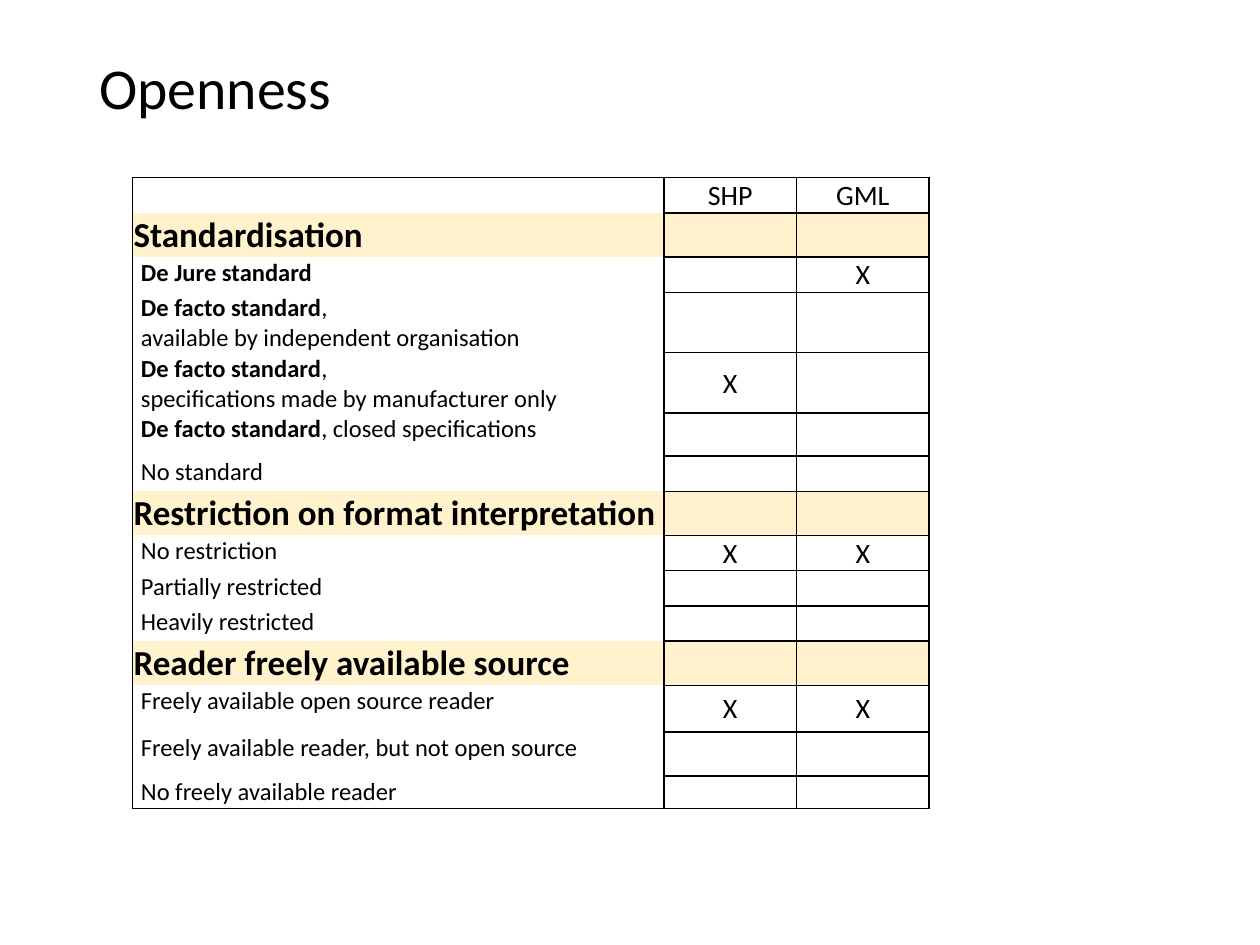
from copy import deepcopy
from lxml.etree import SubElement
from pptx import Presentation
from pptx.dml.color import RGBColor
from pptx.enum.text import MSO_ANCHOR, PP_ALIGN
from pptx.oxml.ns import qn
from pptx.util import Inches, Pt

INK, BAND = "000000", "FFF2CC"
NO_STYLE = "{2D5ABB26-0587-4C30-8999-92F81FD0307C}"


def write(frame, text, lead="", size=14, bold=False, align=PP_ALIGN.LEFT, spacing=1.0):
    paragraph = frame.paragraphs[0]
    paragraph.alignment = align
    paragraph.line_spacing = spacing
    lines = text.split("\n")
    pieces = [(lead, True, False)] if lead else []
    pieces += [(line, bold, i > 0) for i, line in enumerate(lines) if line]
    for words, heavy, starts_line in pieces:
        if starts_line:
            line_break = paragraph._p.add_br()
            line_break.append(deepcopy(run._r.rPr))
        run = paragraph.add_run()
        run.text = words
        run.font.name = "Calibri"
        run.font.size = Pt(size)
        run.font.bold = heavy
        run.font.color.rgb = RGBColor.from_string(INK)
    SubElement(paragraph._p, qn("a:endParaRPr"), sz=str(size * 100))


def outline(cell, sides):
    properties = cell._tc.get_or_add_tcPr()
    for side in "LRTB":
        line = SubElement(properties, qn(f"a:ln{side}"), w=str(Pt(1)))
        if side in sides:
            solid = SubElement(line, qn("a:solidFill"))
            SubElement(solid, qn("a:srgbClr"), val=INK)
        else:
            SubElement(line, qn("a:noFill"))


presentation = Presentation()
presentation.slide_width, presentation.slide_height = Inches(10), Inches(7.5)
slide = presentation.slides.add_slide(presentation.slide_layouts[6])

heading = slide.shapes.add_textbox(Inches(0.69), Inches(0.4), Inches(8.62), Inches(1.14)).text_frame
heading.word_wrap = True
heading.vertical_anchor = MSO_ANCHOR.TOP
heading.margin_top = Inches(0.07)
write(heading, "Openness", size=33, spacing=0.9)

DE_FACTO = "De facto standard"
criteria = [
    ("head", "", "", ("SHP", "GML"), 0.28),
    ("section", "", "Standardisation", ("", ""), 0.35),
    ("item", "De Jure standard", "", ("", "X"), 0.28),
    ("item", DE_FACTO, ", \navailable by independent organisation", ("", ""), 0.48),
    ("item", DE_FACTO, ", \nspecifications made by manufacturer only", ("X", ""), 0.48),
    ("item", DE_FACTO, ", closed specifications", ("", ""), 0.34),
    ("item", "", "No standard", ("", ""), 0.28),
    ("section", "", "Restriction on format interpretation", ("", ""), 0.35),
    ("item", "", "No restriction", ("X", "X"), 0.28),
    ("item", "", "Partially restricted", ("", ""), 0.28),
    ("item", "", "Heavily restricted", ("", ""), 0.28),
    ("section", "", "Reader freely available source", ("", ""), 0.35),
    ("item", "", "Freely available open source reader", ("X", "X"), 0.37),
    ("item", "", "Freely available reader, but not open source", ("", ""), 0.35),
    ("item", "", "No freely available reader", ("", ""), 0.26),
]

table_width = 8.42
mark_width = table_width / 8
indent_width = 0.05
widths = [indent_width, 4 * mark_width - indent_width] + [mark_width] * 4
table_height = sum(row[-1] for row in criteria)
matrix = slide.shapes.add_table(
    len(criteria), len(widths), Inches(1.05), Inches(1.41), Inches(table_width), Inches(table_height)
).table
matrix.first_row = matrix.horz_banding = False
matrix._tbl.tblPr.find(qn("a:tableStyleId")).text = NO_STYLE
for column, width in zip(matrix.columns, widths):
    column.width = Inches(width)

last = len(criteria) - 1
for r, (kind, lead, label, marks, height) in enumerate(criteria):
    matrix.rows[r].height = Inches(height)
    spanning = kind != "item"
    outer = "T" * (r == 0) + "B" * (r == last)
    borders = ["LR" if spanning else "L", "R", "LRTB", "LRTB", "L", ""]
    for c, sides in enumerate(borders):
        cell = matrix.cell(r, c)
        cell.margin_left = cell.margin_right = cell.margin_top = Inches(0.01)
        cell.margin_bottom = 0
        outline(cell, sides + outer if c < 2 else sides)
        if kind == "section" and c < 4:
            cell.fill.solid()
            cell.fill.fore_color.rgb = RGBColor.from_string(BAND)
        else:
            cell.fill.background()
        if c == (0 if spanning else 1):
            write(cell.text_frame, label, lead=lead, size=20 if kind == "section" else 14, bold=kind == "section")
        elif c in (2, 3) and marks[c - 2]:
            cell.vertical_anchor = MSO_ANCHOR.BOTTOM if kind == "head" else MSO_ANCHOR.MIDDLE
            write(cell.text_frame, marks[c - 2], size=16, align=PP_ALIGN.CENTER)
        else:
            write(cell.text_frame, "")
    if spanning:
        matrix.cell(r, 0).merge(matrix.cell(r, 1))

presentation.save("out.pptx")
